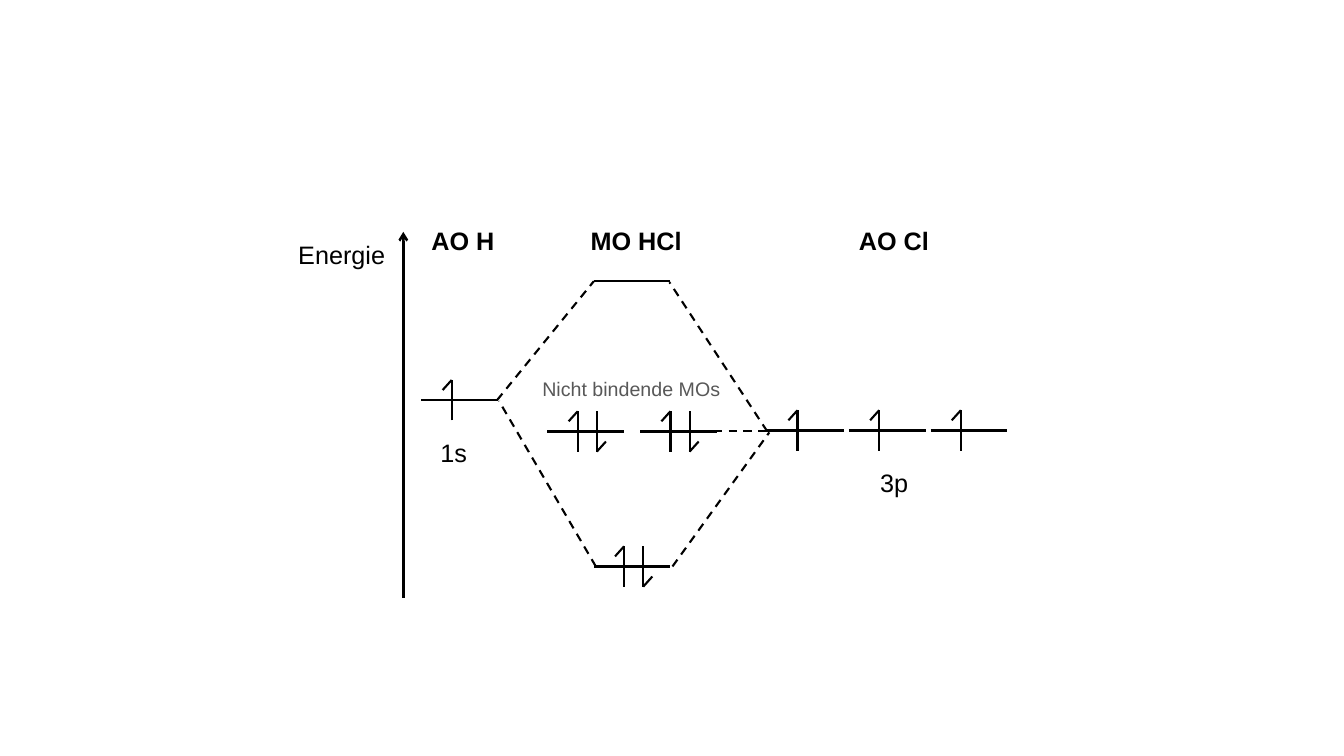
from dataclasses import dataclass

from lxml import etree
from pptx import Presentation
from pptx.dml import color
from pptx.enum import dml, shapes, text
from pptx.oxml import ns
from pptx.slide import Slide
from pptx.util import Inches, Pt

INK = {"black": "000000", "gray": "585858"}
WIDTH = 0.76
RISE = 0.2
BARB = 0.09
THICK = 1.75
THIN = 1.5


@dataclass
class Level:
    left: float
    y: float
    spins: int = 0


@dataclass
class Link:
    x1: float
    y1: float
    x2: float
    y2: float


@dataclass
class Label:
    words: str
    left: float
    top: float
    width: float
    height: float = 0.4
    size: int = 18
    bold: bool = False
    ink: str = "black"


LEVELS = [
    Level(4.18, 3.97, 1),
    Level(5.89, 2.79),
    Level(5.89, 5.62, 2),
    Level(5.43, 4.28, 2),
    Level(6.35, 4.28, 2),
    *[Level(7.61 + 0.81 * i, 4.27, 1) for i in range(3)],
]

LINKS = [
    Link(4.93, 3.97, 5.89, 2.79),
    Link(5.91, 5.62, 4.95, 3.98),
    Link(6.67, 5.62, 7.63, 4.29),
    Link(7.61, 4.28, 6.64, 2.8),
    Link(7.08, 4.28, 7.61, 4.28),
]

LABELS = [
    Label("Energie", 2.86, 2.33, 1.23),
    Label("AO H", 4.18, 2.19, 0.9, bold=True),
    Label("AO Cl", 8.42, 2.19, 0.9, bold=True),
    Label("MO HCl", 5.76, 2.19, 1.24, bold=True),
    Label("1s", 4.27, 4.29, 0.53),
    Label("3p", 8.63, 4.59, 0.53),
    Label("Nicht bindende MOs", 5.28, 3.69, 1.99, 0.34, 14, ink="gray"),
]


def draw_line(slide: Slide, link: Link, weight: float,
              dash: bool = False, head: bool = False) -> None:
    line = slide.shapes.add_connector(
        shapes.MSO_CONNECTOR.STRAIGHT, Inches(link.x1), Inches(link.y1),
        Inches(link.x2), Inches(link.y2))
    line.line.color.rgb = color.RGBColor.from_string(INK["black"])
    line.line.width = Pt(weight)
    if dash:
        line.line.dash_style = dml.MSO_LINE.DASH
    if head:
        tip = etree.SubElement(line.line._get_or_add_ln(), ns.qn("a:tailEnd"))
        tip.set("type", "arrow")
    etree.SubElement(line._element.spPr, ns.qn("a:effectLst"))


def draw_spin(slide: Slide, x: float, y: float, way: int) -> None:
    tip = y - way * RISE
    draw_line(slide, Link(x, y + way * RISE, x, tip), THIN)
    draw_line(slide, Link(x, tip, x - way * BARB, tip + way * 0.1), THIN)


def draw_level(slide: Slide, level: Level) -> None:
    draw_line(slide, Link(level.left, level.y, level.left + WIDTH, level.y), THICK)
    for shift, way in [(0.3, 1), (0.49, -1)][:level.spins]:
        draw_spin(slide, level.left + shift, level.y, way)


def draw_label(slide: Slide, label: Label) -> None:
    box = slide.shapes.add_textbox(
        Inches(label.left), Inches(label.top),
        Inches(label.width), Inches(label.height))
    frame = box.text_frame
    frame.text = label.words
    frame.word_wrap = True
    frame.auto_size = text.MSO_AUTO_SIZE.SHAPE_TO_FIT_TEXT
    font = frame.paragraphs[0].runs[0].font
    font.name = "Arial"
    font.size = Pt(label.size)
    font.bold = label.bold
    font.color.rgb = color.RGBColor.from_string(INK[label.ink])


def main() -> None:
    deck = Presentation()
    deck.slide_width = Inches(13.33)
    deck.slide_height = Inches(7.5)
    slide = deck.slides.add_slide(deck.slide_layouts[6])
    draw_line(slide, Link(4, 5.93, 4, 2.3), THICK, head=True)
    for level in LEVELS:
        draw_level(slide, level)
    for link in LINKS:
        draw_line(slide, link, THIN, dash=True)
    for label in LABELS:
        draw_label(slide, label)
    deck.save("out.pptx")


if __name__ == "__main__":
    main()
